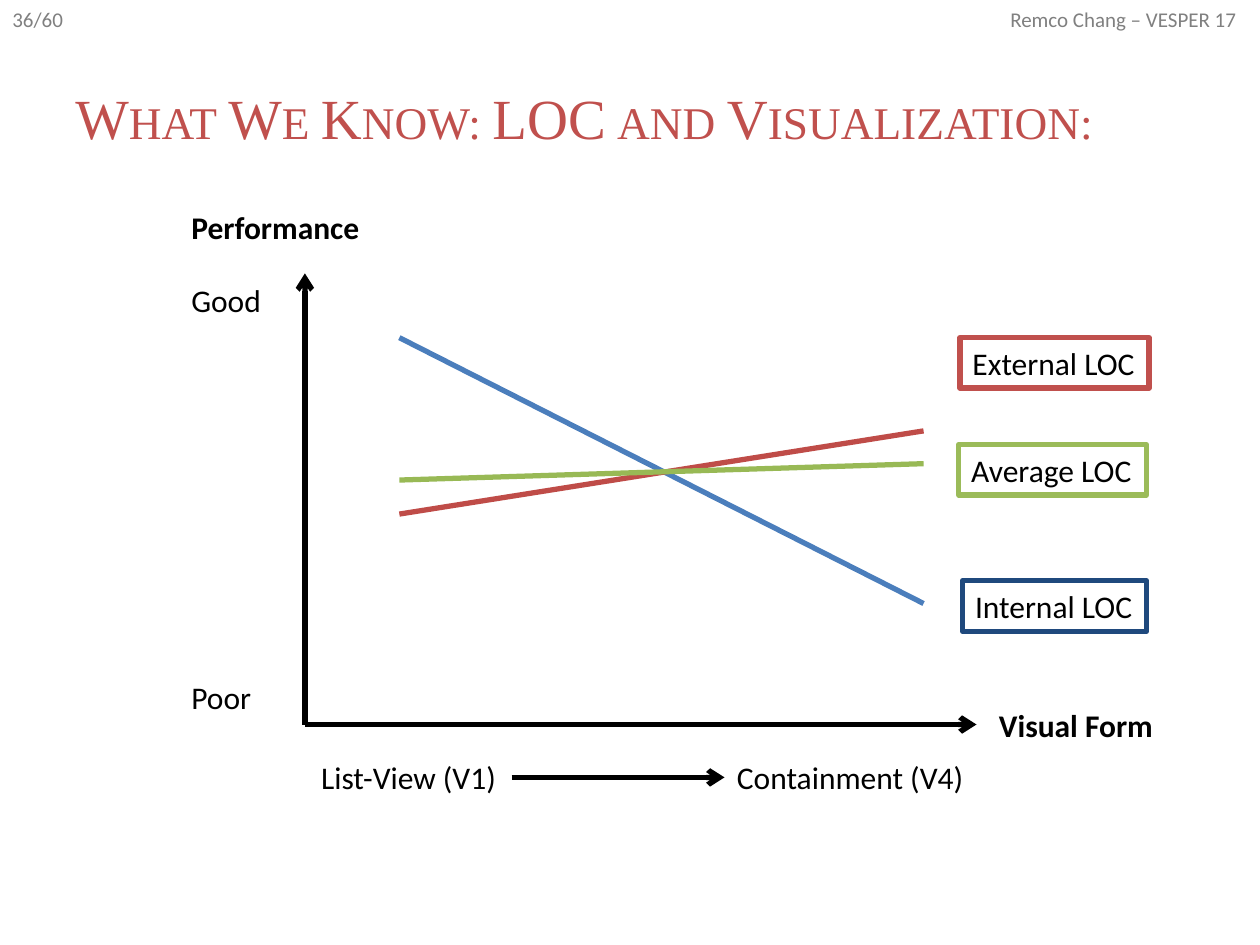
from pptx import Presentation
from pptx.dml.color import RGBColor
from pptx.enum.shapes import MSO_CONNECTOR, MSO_SHAPE
from pptx.enum.text import MSO_ANCHOR, PP_ALIGN
from pptx.oxml.ns import qn
from pptx.util import Inches, Pt
from lxml import etree

STRAIGHT = MSO_CONNECTOR.STRAIGHT
RECTANGLE = MSO_SHAPE.RECTANGLE
LEFT = PP_ALIGN.LEFT
MIDDLE = MSO_ANCHOR.MIDDLE
LEFT_SIDE, RIGHT_SIDE = 1, 3

COLORS = {
    "black": "000000",
    "gray": "808080",
    "title": "C0504D",
    "internal line": "4B7EBC",
    "internal box": "1F497D",
    "external line": "BF4C48",
    "external box": "C0504D",
    "average line": "98B955",
    "average box": "9BBB59",
}


class SlideBuilder:
    body_font = "Calibri"
    title_font = "Times New Roman"
    line_width = Pt(3)
    label_height = 0.4

    def __init__(self, slide):
        self.slide = slide

    def color(self, name):
        return RGBColor.from_string(COLORS[name])

    def set_text(self, shape, text, size=18, color="black", bold=False, font=None):
        frame = shape.text_frame
        frame.word_wrap = False
        frame.vertical_anchor = MIDDLE
        paragraph = frame.paragraphs[0]
        paragraph.alignment = LEFT
        paragraph.add_run().text = text
        paragraph.font.name = font or self.body_font
        paragraph.font.size = Pt(size)
        paragraph.font.bold = bold
        paragraph.font.color.rgb = self.color(color)
        return paragraph

    def label(self, text, left, top, width, height=label_height, **style):
        box = self.slide.shapes.add_textbox(
            Inches(left), Inches(top), Inches(width), Inches(height))
        self.set_text(box, text, **style)
        return box

    def title(self, text):
        box = self.slide.shapes.add_textbox(
            Inches(0.5), Inches(0.3), Inches(9), Inches(1.25))
        paragraph = self.set_text(box, text, 32.4, "title", font=self.title_font)
        box.text_frame.word_wrap = True
        paragraph.runs[0]._r.get_or_add_rPr().set("cap", "small")

    def line(self, start, end, color="black", shapes=None):
        if shapes is None:
            shapes = self.slide.shapes
        points = [Inches(value) for value in (*start, *end)]
        connector = shapes.add_connector(STRAIGHT, *points)
        connector.line.color.rgb = self.color(color)
        connector.line.width = self.line_width
        etree.SubElement(connector._element.spPr, qn("a:effectLst"))
        return connector

    def arrow(self, start, end):
        connector = self.line(start, end)
        outline = connector.line._get_or_add_ln()
        etree.SubElement(outline, qn("a:tailEnd"), type="arrow")
        return connector

    def series(self, name, start_y, end_y, left, top, width):
        """Group a trend line with the outlined box that names it."""
        group = self.slide.shapes.add_group_shape()
        key = name.lower()
        self.line((3.17, start_y), (7.33, end_y), f"{key} line", group.shapes)
        box = group.shapes.add_shape(
            RECTANGLE, Inches(left), Inches(top), Inches(width), Inches(self.label_height))
        box.shadow.inherit = False
        box.fill.background()
        box.line.color.rgb = self.color(f"{key} box")
        box.line.width = self.line_width
        self.set_text(box, f"{name} LOC")


def main():
    presentation = Presentation()
    presentation.slide_width = Inches(10)
    presentation.slide_height = Inches(7.5)
    builder = SlideBuilder(presentation.slides.add_slide(presentation.slide_layouts[6]))

    builder.label("36/60", 0, 0, 0.64, 0.3, size=12, color="gray")
    builder.label("Remco Chang – VESPER 17", 7.92, 0, 2.06, 0.3, size=12, color="gray")
    builder.title("What We Know: LOC and Visualization:")

    origin = (2.42, 5.75)
    builder.arrow(origin, (2.42, 2.17))
    builder.arrow(origin, (7.75, 5.75))
    builder.label("Visual Form", 7.83, 5.55, 1.43, bold=True)
    builder.label("Performance", 1.42, 1.6, 1.55, bold=True)
    builder.label("Poor", 1.42, 5.33, 0.68)
    builder.label("Good", 1.42, 2.18, 0.76)

    list_view = builder.label("List-View (V1)", 2.45, 5.97, 1.61)
    containment = builder.label("Containment (V4)", 5.75, 5.97, 2.08)
    form_arrow = builder.arrow((4.06, 6.17), (5.75, 6.17))
    form_arrow.begin_connect(list_view, RIGHT_SIDE)
    form_arrow.end_connect(containment, LEFT_SIDE)

    for series in (
        ("Internal", 2.68, 4.79, 7.64, 4.61, 1.46),
        ("External", 4.08, 3.42, 7.62, 2.68, 1.5),
        ("Average", 3.81, 3.68, 7.61, 3.53, 1.49),
    ):
        builder.series(*series)

    presentation.save("out.pptx")


if __name__ == "__main__":
    main()
